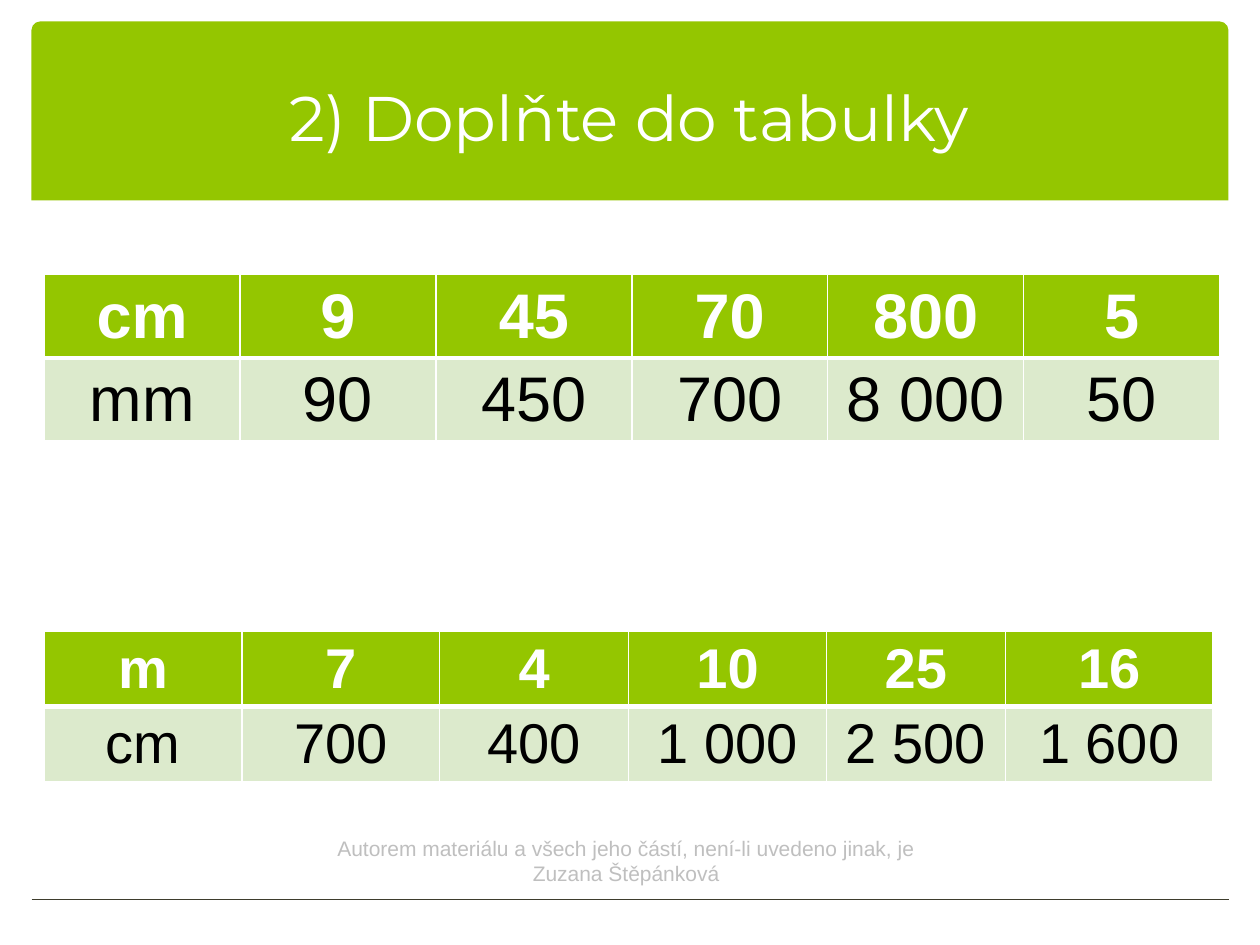
from lxml import etree
from pptx import Presentation
from pptx import util as u
from pptx.dml.color import RGBColor
from pptx.enum import shapes, text
from pptx.oxml import ns

GREEN, PALE, WHITE, BLACK = "94C600", "DCEACC", "FFFFFF", "000000"
LENGTHS = [
    ["cm", "9", "45", "70", "800", "5"],
    ["mm", "90", "450", "700", "8 000", "50"],
]
METRES = [
    ["m", "7", "4", "10", "25", "16"],
    ["cm", "700", "400", "1 000", "2 500", "1 600"],
]


def color(value):
    return RGBColor.from_string(value)


def inches(*values):
    return [u.Inches(value) for value in values]


def write(frame, words, size, font, ink, bold=False):
    para = frame.paragraphs[0]
    para.alignment = text.PP_ALIGN.CENTER
    span = para.add_run()
    span.text = words
    span.font.size = u.Pt(size)
    span.font.name = font
    span.font.bold = bold
    span.font.color.rgb = color(ink)


def add_title(page, words):
    title = page.shapes.title
    title.left, title.top, title.width, title.height = inches(0.33, 0.3, 9.33, 1.25)
    title.text_frame.vertical_anchor = text.MSO_ANCHOR.MIDDLE
    write(title.text_frame, words, 36, "Montserrat", WHITE)
    band = page.shapes.add_shape(
        shapes.MSO_SHAPE.ROUND_2_SAME_RECTANGLE, *inches(0.25, 0.17, 9.5, 1.42))
    band.adjustments[0] = 0.049
    band.adjustments[1] = 0
    band.shadow.inherit = False
    band.fill.solid()
    band.fill.fore_color.rgb = color(GREEN)
    band.line.fill.background()
    title.element.addprevious(band.element)


def add_rule(page):
    rule = page.shapes.add_connector(
        shapes.MSO_CONNECTOR.STRAIGHT, *inches(0.25, 7.14, 9.75, 7.14))
    rule.line.color.rgb = color("3E3D2D")
    rule.line.width = u.Pt(1)
    etree.SubElement(rule.element.spPr, ns.qn("a:effectLst"))


def add_borders(cell, bottom):
    props = cell._tc.get_or_add_tcPr()
    for index, side in enumerate("LRTB"):
        edge = etree.Element(ns.qn(f"a:ln{side}"))
        edge.set("w", str(u.Pt(bottom if side == "B" else 1)))
        fill = etree.SubElement(edge, ns.qn("a:solidFill"))
        etree.SubElement(fill, ns.qn("a:srgbClr")).set("val", WHITE)
        props.insert(index, edge)


def add_units(page, rows, top, height, widths, size):
    frame = page.shapes.add_table(
        len(rows), len(widths), *inches(0.35, top, sum(widths), height))
    table = frame.table
    for column, width in zip(table.columns, widths):
        column.width = u.Inches(width)
    for r, row in enumerate(rows):
        table.rows[r].height = u.Inches(0.41)
        head = r == 0
        for c, words in enumerate(row):
            cell = table.cell(r, c)
            cell.fill.solid()
            cell.fill.fore_color.rgb = color(GREEN if head else PALE)
            write(cell.text_frame, words, size, "Arial", WHITE if head else BLACK, head)
            add_borders(cell, 3 if head else 1)
    frame.height = u.Inches(height)


def add_credit(page, words):
    box = page.shapes.add_textbox(*inches(2.47, 6.58, 5, 0.5))
    box.text_frame.word_wrap = True
    box.text_frame.auto_size = text.MSO_AUTO_SIZE.SHAPE_TO_FIT_TEXT
    write(box.text_frame, words, 12, "Arial", "BFBFBF")


def main():
    deck = Presentation()
    deck.slide_width, deck.slide_height = inches(10, 7.5)
    page = deck.slides.add_slide(deck.slide_layouts[5])
    add_title(page, "2) Doplňte do tabulky")
    add_rule(page)
    add_units(page, LENGTHS, 2.18, 1.4, [9.33 / 6] * 6, 36)
    add_units(page, METRES, 5.01, 1.27, [1.57, 1.57, 1.5, 1.57, 1.42, 1.65], 32)
    add_credit(page, "Autorem materiálu a všech jeho částí, není-li uvedeno jinak, je Zuzana Štěpánková")
    deck.save("out.pptx")


if __name__ == "__main__":
    main()
